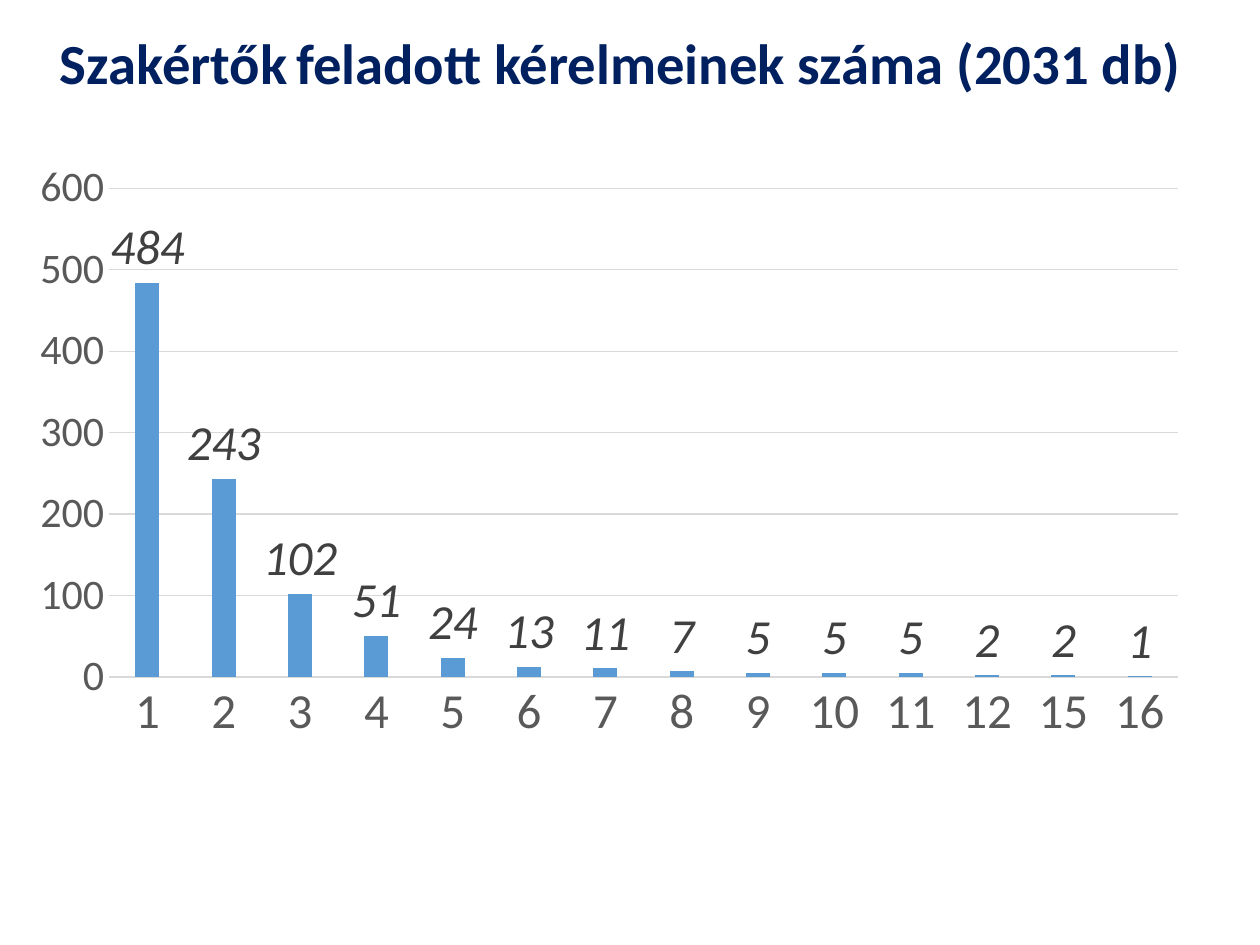
from lxml import etree
from pptx import Presentation
from pptx.chart.data import CategoryChartData
from pptx.dml.color import RGBColor
from pptx.enum.chart import XL_CHART_TYPE, XL_LABEL_POSITION, XL_TICK_MARK
from pptx.enum.text import MSO_ANCHOR, MSO_AUTO_SIZE, PP_ALIGN
from pptx.oxml.ns import qn
from pptx.util import Inches, Pt

COLUMNS = XL_CHART_TYPE.COLUMN_CLUSTERED
OUTSIDE_END = XL_LABEL_POSITION.OUTSIDE_END
NO_TICK = XL_TICK_MARK.NONE
MIDDLE, CENTER = MSO_ANCHOR.MIDDLE, PP_ALIGN.CENTER

REQUESTS = {1: 484, 2: 243, 3: 102, 4: 51, 5: 24, 6: 13, 7: 11,
            8: 7, 9: 5, 10: 5, 11: 5, 12: 2, 15: 2, 16: 1}
GREY, RULE = "595959", "D9D9D9"


def color(hex_value):
    return RGBColor.from_string(hex_value)


def style(font, size, hex_value):
    font.name = "Calibri"
    font.size = Pt(size)
    font.color.rgb = color(hex_value)


prs = Presentation()
prs.slide_width, prs.slide_height = Inches(10), Inches(7.5)
W, H = prs.slide_width, prs.slide_height
slide = prs.slides.add_slide(prs.slide_layouts[5])

# Title
heading = slide.shapes.title
heading.left, heading.top = Inches(0.12), Inches(0.21)
heading.width, heading.height = Inches(9.61), Inches(0.63)
frame = heading.text_frame
frame.word_wrap = True
frame.auto_size = MSO_AUTO_SIZE.NONE
frame.vertical_anchor = MIDDLE
line = frame.paragraphs[0]
line.alignment = CENTER
line.line_spacing = 0.9
for text, size, hex_value in [
    ("Szakértők", 32.4, "002060"),
    (" ", 21.6, GREY),
    ("feladott kérelmeinek száma (2031 db)", 32.4, "002060"),
]:
    run = line.add_run()
    run.text = text
    style(run.font, size, hex_value)
    run.font.bold = True

# Column chart
data = CategoryChartData()
data.categories = [str(count) for count in REQUESTS]
data.add_series("Series 1", list(REQUESTS.values()))
chart = slide.shapes.add_chart(
    COLUMNS, int(W * 0.02), Inches(0.99), Inches(9.53), Inches(5.04), data).chart
chart.has_legend = False
chart.has_title = False
style(chart.font, 10, "000000")

# Columns and their values
plot = chart.plots[0]
plot.gap_width, plot.overlap = 219, -27
plot.vary_by_categories = False
experts = plot.series[0]
experts.invert_if_negative = False
experts.format.fill.solid()
experts.format.fill.fore_color.rgb = color("5B9BD5")
labels = experts.data_labels
labels.show_value = True
labels.position = OUTSIDE_END
style(labels.font, 28, "404040")
labels.font.italic = True

# Axes
for axis, size in [(chart.category_axis, 28), (chart.value_axis, 24)]:
    axis.major_tick_mark = axis.minor_tick_mark = NO_TICK
    style(axis.tick_labels.font, size, GREY)
chart.category_axis.has_major_gridlines = False
chart.value_axis.has_major_gridlines = True
chart.value_axis.minimum_scale, chart.value_axis.maximum_scale = 0, 600
chart.value_axis.major_unit = 100
chart.value_axis.format.line.fill.background()
for rule in (chart.category_axis.format.line,
             chart.value_axis.major_gridlines.format.line):
    rule.color.rgb = color(RULE)
    rule.width = Pt(0.75)

# Inner plot area as shares of the chart
plot_area = chart._chartSpace.chart.plotArea
for old in plot_area.findall(qn("c:layout")):
    plot_area.remove(old)
layout = etree.Element(qn("c:layout"))
plot_area.insert(0, layout)
manual = etree.SubElement(layout, qn("c:manualLayout"))
for tag, value in [("layoutTarget", "inner"), ("xMode", "edge"), ("yMode", "edge"),
                   ("x", 0.07), ("y", 0.1), ("w", 0.89), ("h", 0.77)]:
    etree.SubElement(manual, qn("c:" + tag)).set("val", str(value))

prs.save("out.pptx")
